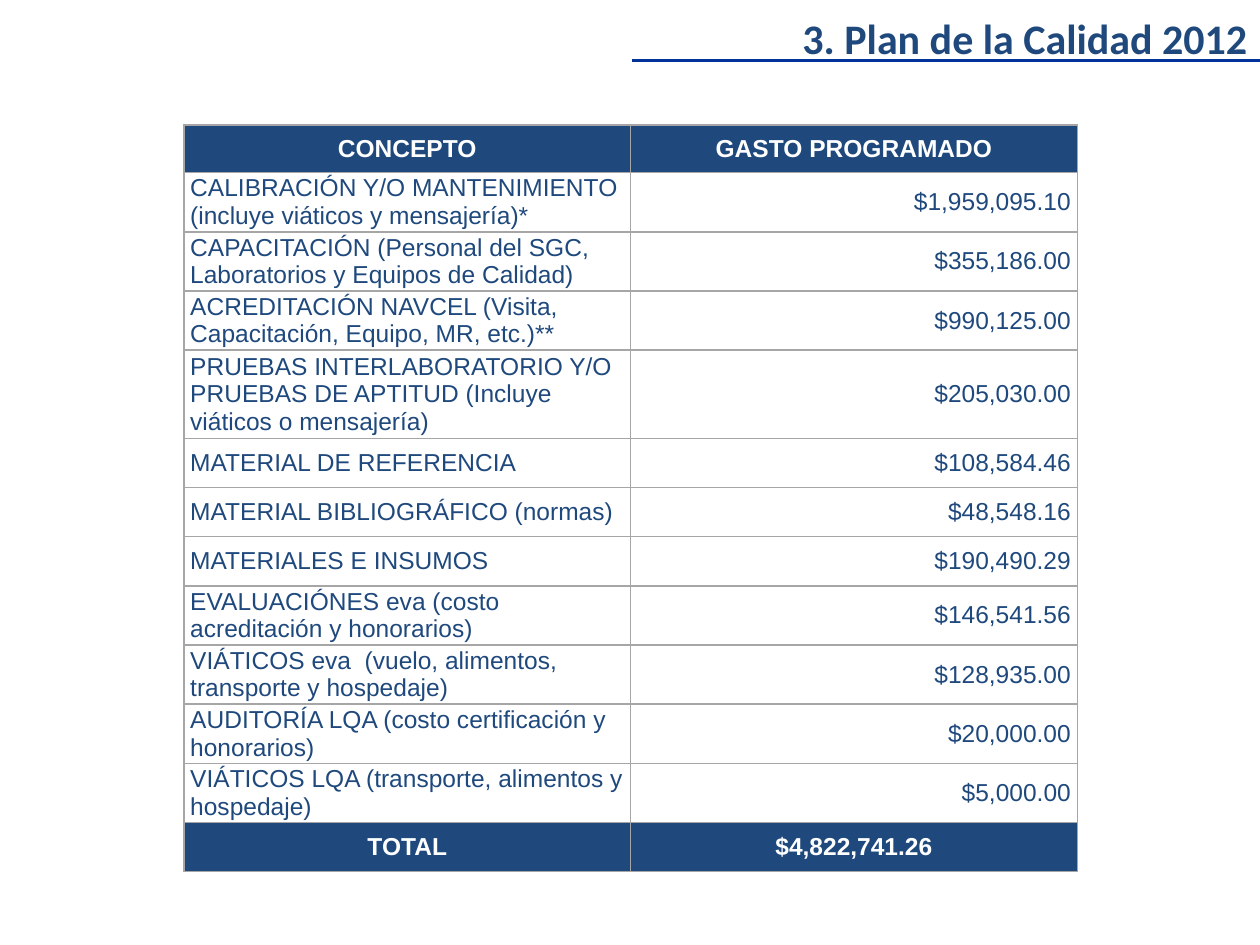
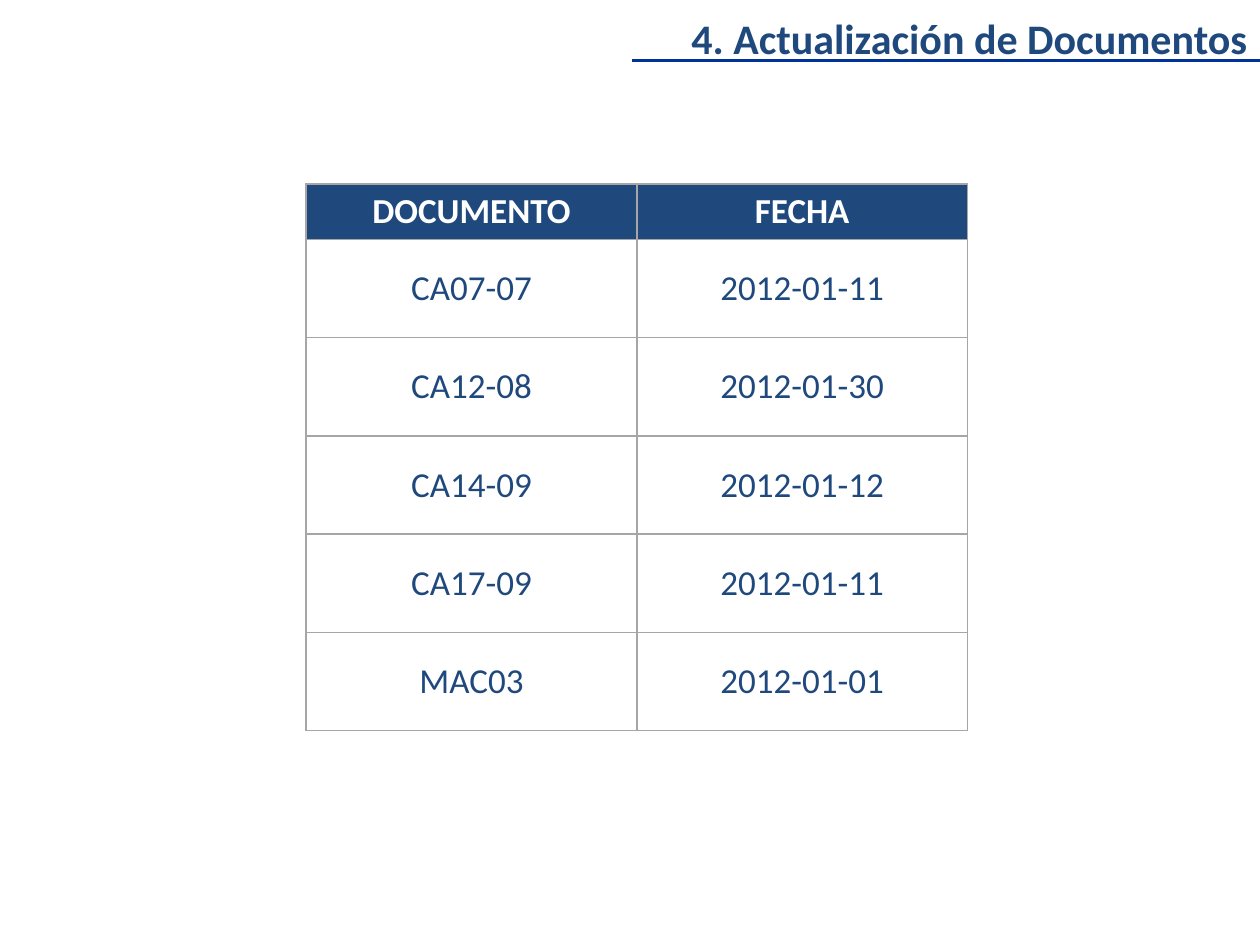
import pptx
import pptx.util
import pptx.dml.color
import pptx.enum.shapes
import pptx.enum.text
import pptx.oxml.ns
from lxml import etree

Inches = pptx.util.Inches
Pt = pptx.util.Pt
RGBColor = pptx.dml.color.RGBColor
Align = pptx.enum.text.PP_ALIGN
Anchor = pptx.enum.text.MSO_ANCHOR
qn = pptx.oxml.ns.qn

NAVY = RGBColor(0x1F, 0x49, 0x7D)
BLUE = RGBColor(0x00, 0x33, 0x99)
GRAY = RGBColor(0xA6, 0xA6, 0xA6)
WHITE = RGBColor(0xFF, 0xFF, 0xFF)

# Concept, planned spending, height of the row
COSTS = [
    ("CONCEPTO", "GASTO PROGRAMADO", 0.38),
    ("CALIBRACIÓN Y/O MANTENIMIENTO (incluye viáticos y mensajería)*", "$1,959,095.10", 0.47),
    ("CAPACITACIÓN (Personal del SGC, Laboratorios y Equipos de Calidad)", "$355,186.00", 0.47),
    ("ACREDITACIÓN NAVCEL (Visita, Capacitación, Equipo, MR, etc.)**", "$990,125.00", 0.47),
    ("PRUEBAS INTERLABORATORIO Y/O PRUEBAS DE APTITUD (Incluye viáticos o mensajería)",
     "$205,030.00", 0.7),
    ("MATERIAL DE REFERENCIA", "$108,584.46", 0.39),
    ("MATERIAL BIBLIOGRÁFICO (normas)", "$48,548.16", 0.39),
    ("MATERIALES E INSUMOS", "$190,490.29", 0.39),
    ("EVALUACIÓNES eva (costo acreditación y honorarios)", "$146,541.56", 0.47),
    ("VIÁTICOS eva  (vuelo, alimentos, transporte y hospedaje)", "$128,935.00", 0.47),
    ("AUDITORÍA LQA (costo certificación y honorarios)", "$20,000.00", 0.47),
    ("VIÁTICOS LQA (transporte, alimentos y hospedaje)", "$5,000.00", 0.47),
    ("TOTAL", "$4,822,741.26", 0.39),
]

# Document, date, height of the row
DOCS = [
    ("DOCUMENTO", "FECHA", 0.44),
    ("CA07-07", "2012-01-11", 0.78),
    ("CA12-08", "2012-01-30", 0.78),
    ("CA14-09", "2012-01-12", 0.78),
    ("CA17-09", "2012-01-11", 0.78),
    ("MAC03", "2012-01-01", 0.78),
]


def write(frame, text, size=14, font="Calibri", color=NAVY, bold=False, align=Align.LEFT):
    frame.word_wrap = True
    par = frame.paragraphs[0]
    par.alignment = align
    run = par.add_run()
    run.text = text
    run.font.size = Pt(size)
    run.font.name = font
    run.font.bold = bold
    run.font.color.rgb = color


def edge(cell):
    """Draw a thin gray border on all four sides of a cell."""
    props = cell._tc.get_or_add_tcPr()
    for side in ("lnL", "lnR", "lnT", "lnB"):
        line = etree.SubElement(props, qn("a:" + side), w=str(Pt(1)))
        fill = etree.SubElement(line, qn("a:solidFill"))
        etree.SubElement(fill, qn("a:srgbClr"), val=str(GRAY))


def head(slide, title, left=5, top=0.05, width=5, height=0.5):
    # Rule under the title
    level = Inches(top + 0.43)
    rule = slide.shapes.add_connector(
        pptx.enum.shapes.MSO_CONNECTOR.STRAIGHT,
        Inches(left + width), level, Inches(left + 0.02), level)
    rule.line.color.rgb = BLUE
    rule.line.width = Pt(1.5)
    etree.SubElement(rule._element.spPr, qn("a:effectLst"))
    # Title
    box = slide.shapes.add_textbox(Inches(left), Inches(top), Inches(width), Inches(height))
    write(box.text_frame, title, size=24, bold=True, align=Align.RIGHT)
    box.text_frame.auto_size = pptx.enum.text.MSO_AUTO_SIZE.SHAPE_TO_FIT_TEXT


def grid(slide, rows, left, top, width, aligns, bands=(0,), inset=None,
         anchor=Anchor.MIDDLE, **style):
    """Two-column table; bands holds the indexes of its dark rows."""
    height = sum(row[-1] for row in rows)
    table = slide.shapes.add_table(len(rows), len(aligns), Inches(left), Inches(top),
                                   Inches(width), Inches(height)).table
    table.first_row = table.horz_banding = False
    for col in table.columns:
        col.width = Inches(width / len(aligns))
    for i, (*texts, tall) in enumerate(rows):
        table.rows[i].height = Inches(tall)
        dark = i in bands
        for j, text in enumerate(texts):
            cell = table.cell(i, j)
            edge(cell)
            if dark:
                cell.fill.solid()
                cell.fill.fore_color.rgb = NAVY
            else:
                cell.fill.background()
            cell.vertical_anchor = anchor if dark else Anchor.MIDDLE
            if inset is not None:
                cell.margin_left = cell.margin_right = Inches(inset)
                cell.margin_top = cell.margin_bottom = 0
            write(cell.text_frame, text, color=WHITE if dark else NAVY, bold=dark,
                  align=Align.CENTER if dark else aligns[j], **style)


def plan(slide):
    head(slide, "3. Plan de la Calidad 2012")
    grid(slide, COSTS, 1.46, 0.99, 7.09, (Align.LEFT, Align.RIGHT),
         bands=(0, len(COSTS) - 1), inset=0.05, size=14, font="Arial")


def docs(slide):
    head(slide, "4. Actualización de Documentos")
    grid(slide, DOCS, 2.43, 1.46, 5.25, (Align.CENTER, Align.CENTER),
         anchor=Anchor.TOP, size=20)


def main():
    deck = pptx.Presentation()
    deck.slide_width, deck.slide_height = Inches(10), Inches(7.5)
    for build in (plan, docs):
        build(deck.slides.add_slide(deck.slide_layouts[6]))
    deck.save("out.pptx")


if __name__ == "__main__":
    main()
